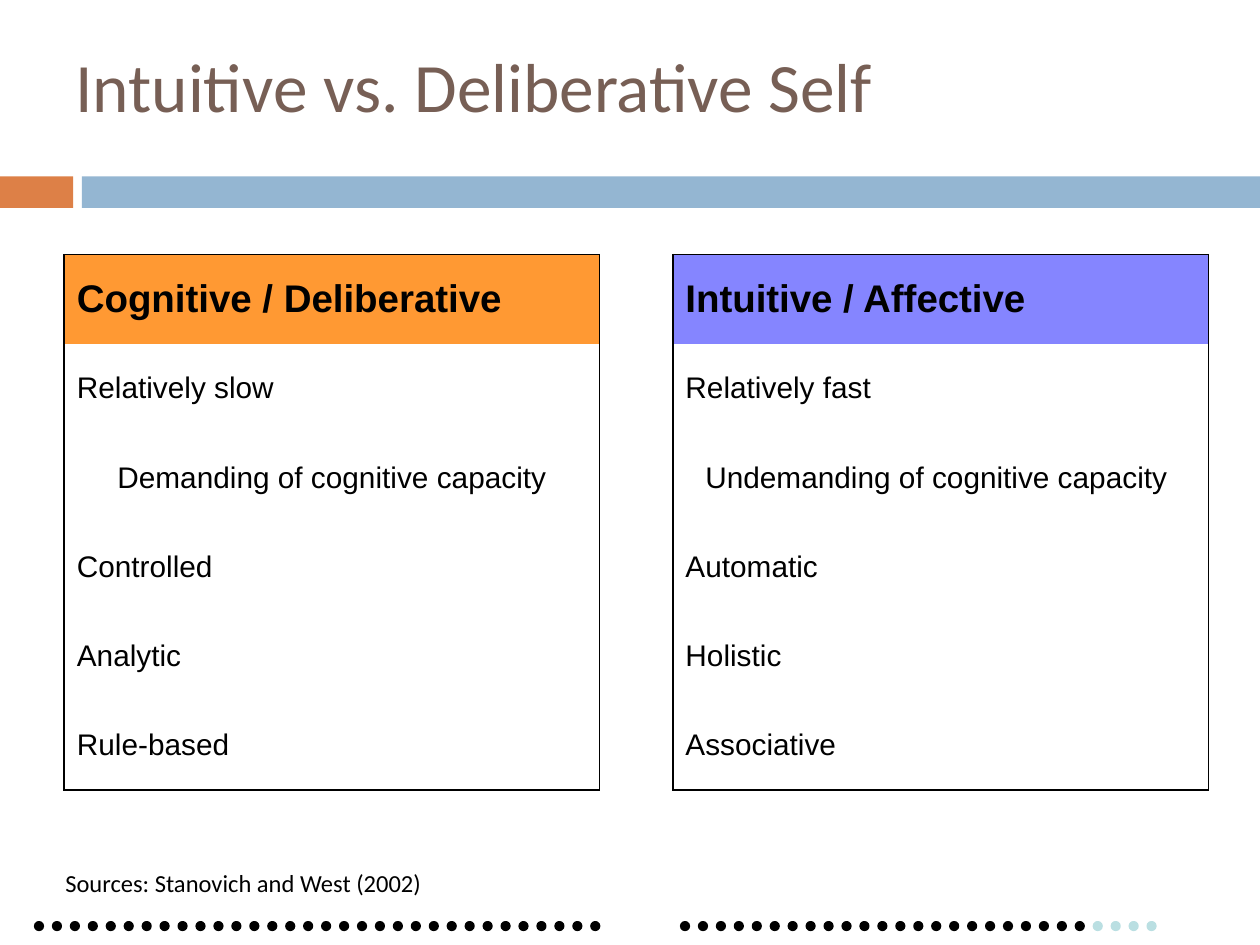
from pptx import Presentation
from pptx import util as u
from pptx.dml.color import RGBColor
from pptx.enum import shapes, text
from pptx.oxml.ns import qn
from lxml import etree

BLACK = RGBColor(0x00, 0x00, 0x00)
BROWN = RGBColor(0x77, 0x5F, 0x55)
RUST = RGBColor(0xDD, 0x80, 0x47)
STEEL = RGBColor(0x94, 0xB6, 0xD2)
ORANGE = RGBColor(0xFF, 0x99, 0x33)
BLUE = RGBColor(0x00, 0x00, 0xFF)
PALE = RGBColor(0xBA, 0xDF, 0xE2)


def style_text(frame, font, size, color, bold=False):
    for para in frame.paragraphs:
        for span in para.runs:
            span.font.name = font
            span.font.size = u.Pt(size)
            span.font.color.rgb = color
            span.font.bold = bold


def add_text(page, box, words, size, color, anchor, wrap):
    label = page.shapes.add_textbox(*map(u.Inches, box))
    frame = label.text_frame
    frame.word_wrap = wrap
    frame.vertical_anchor = anchor
    frame.text = words
    style_text(frame, "Calibri", size, color)


def add_solid(parent, kind, box, color, line_width=None):
    shape = parent.add_shape(kind, *map(u.Inches, box))
    shape.shadow.inherit = False
    shape.fill.solid()
    shape.fill.fore_color.rgb = color
    if line_width:
        shape.line.color.rgb = color
        shape.line.width = u.Pt(line_width)
    else:
        shape.line.fill.background()


def add_band(page, box, accent_width, gap):
    left, top, width, height = box
    start = left + accent_width + gap
    rectangle = shapes.MSO_SHAPE.RECTANGLE
    add_solid(page.shapes, rectangle, (left, top, accent_width, height), RUST)
    add_solid(page.shapes, rectangle, (start, top, left + width - start, height), STEEL)


def set_borders(cell, visible):
    properties = cell._tc.get_or_add_tcPr()
    for index, side in enumerate("LRTB"):
        line = etree.Element(qn(f"a:ln{side}"), w=str(u.Pt(1)))
        if side in visible:
            fill = etree.SubElement(line, qn("a:solidFill"))
            etree.SubElement(fill, qn("a:srgbClr"), val=str(BLACK))
        else:
            etree.SubElement(line, qn("a:noFill"))
        properties.insert(index, line)


def add_trait_table(page, box, heading, traits, color, opacity=100, spacer=0):
    rows = [heading] + traits
    columns = 2 if spacer else 1
    table = page.shapes.add_table(len(rows), columns, *map(u.Inches, box)).table
    table.first_row = False
    table.horz_banding = False
    table.columns[columns - 1].width = u.Inches(box[2] - spacer)
    if spacer:
        table.columns[0].width = u.Inches(spacer)
    for index, words in enumerate(rows):
        if spacer:
            table.cell(index, 0).fill.background()
            set_borders(table.cell(index, 0), "R")
        is_heading = index == 0
        size = 22 if is_heading else 17
        cell = table.cell(index, columns - 1)
        cell.vertical_anchor = text.MSO_ANCHOR.MIDDLE
        cell.text_frame.text = words
        style_text(cell.text_frame, "Arial", size, BLACK, is_heading)
        para = cell.text_frame.paragraphs[0]
        para.space_before = u.Pt(0.2 * size)
        if "capacity" in words:
            para.alignment = text.PP_ALIGN.CENTER
        if is_heading:
            cell.fill.solid()
            cell.fill.fore_color.rgb = color
            if opacity < 100:
                swatch = cell._tc.tcPr.find(f".//{qn('a:srgbClr')}")
                etree.SubElement(swatch, qn("a:alpha"), val=str(opacity * 1000))
        else:
            cell.fill.background()
        edges = {0: "LRT", len(rows) - 1: "LRB"}
        set_borders(cell, edges.get(index, "LR"))


def add_dots(page, box):
    left, top, width, size = box
    slots, pale_from = 63, 59
    pitch = (width - size) / (slots - 1)
    for run in (range(32), range(36, slots)):
        group = page.shapes.add_group_shape()
        for slot in run:
            color = PALE if slot >= pale_from else BLACK
            place = (left + slot * pitch, top, size, size)
            add_solid(group.shapes, shapes.MSO_SHAPE.OVAL, place, color, 1.5)


def main():
    deck = Presentation()
    deck.slide_width = u.Inches(10)
    deck.slide_height = u.Inches(7.5)
    page = deck.slides.add_slide(deck.slide_layouts[6])
    add_band(page, (0, 1.4, 10, 0.25), 0.58, 0.07)
    add_trait_table(
        page, (0.51, 2.02, 4.25, 4.25), "Cognitive / Deliberative",
        ["Relatively slow", "Demanding of cognitive capacity", "Controlled",
         "Analytic", "Rule-based"], ORANGE)
    add_text(page, (0.42, 6.67, 4.34, 0.5), "Sources: Stanovich and West (2002)",
             14, BLACK, text.MSO_ANCHOR.BOTTOM, False)
    add_trait_table(
        page, (4.84, 2.02, 4.75, 4.25), "Intuitive / Affective",
        ["Relatively fast", "Undemanding of cognitive capacity ", "Automatic",
         "Holistic", "Associative"], BLUE, 48, 0.5)
    add_text(page, (0.5, 0.28, 9.07, 0.79), "Intuitive vs. Deliberative Self",
             39.6, BROWN, text.MSO_ANCHOR.MIDDLE, True)
    add_dots(page, (0.28, 7.32, 8.89, 0.06))
    deck.save("out.pptx")


if __name__ == "__main__":
    main()
